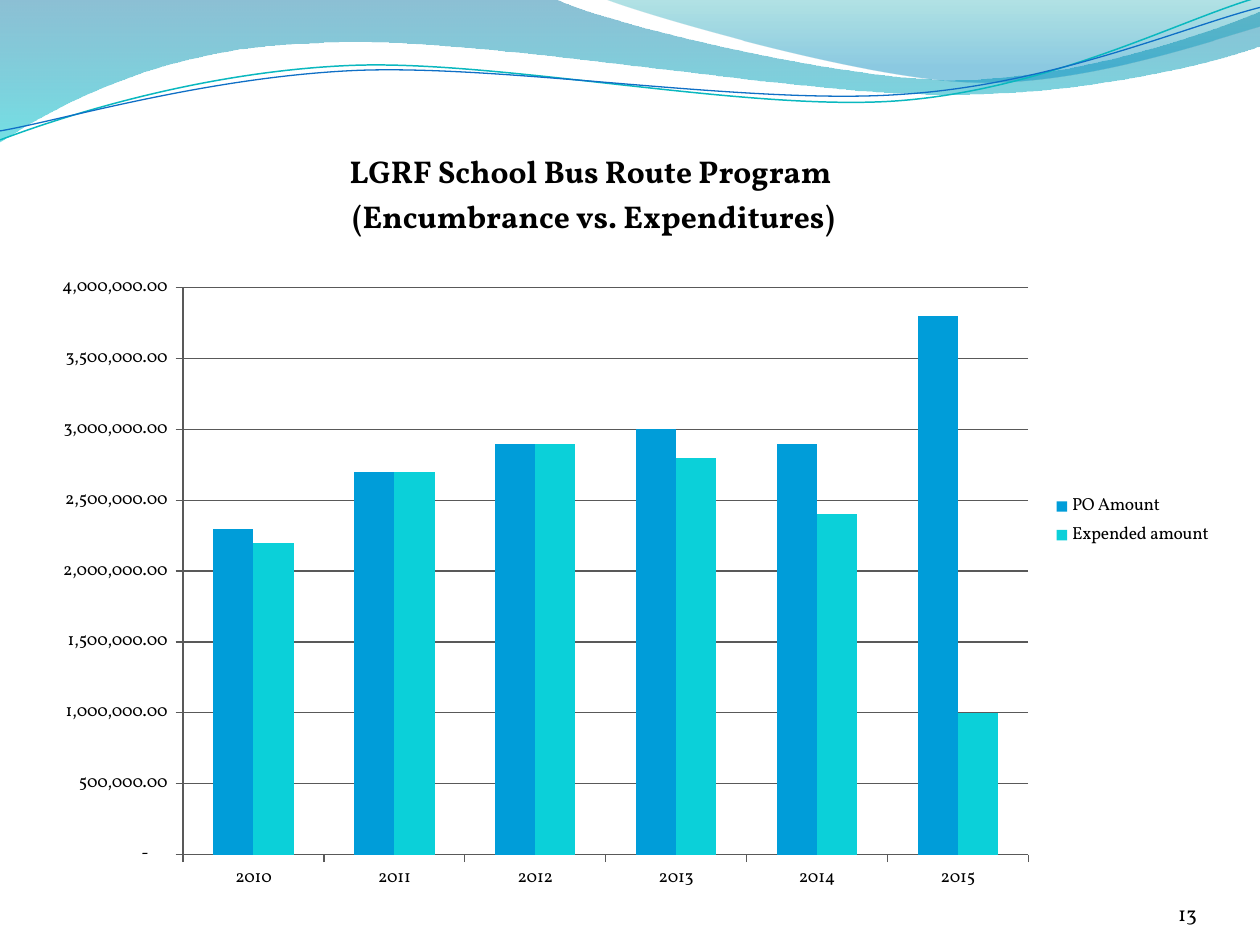
from math import cos, radians, sin

from lxml import etree
from pptx import Presentation
from pptx.chart.data import CategoryChartData
from pptx.dml.color import RGBColor
from pptx.enum.chart import XL_CHART_TYPE, XL_LEGEND_POSITION, XL_TICK_MARK
from pptx.enum.text import MSO_ANCHOR, PP_ALIGN
from pptx.oxml import parse_xml
from pptx.oxml.ns import nsdecls, qn
from pptx.util import Cm, Pt

COLUMNS = XL_CHART_TYPE.COLUMN_CLUSTERED
LEGEND_RIGHT = XL_LEGEND_POSITION.RIGHT
TICK_OUTSIDE = XL_TICK_MARK.OUTSIDE
BOTTOM = MSO_ANCHOR.BOTTOM
RIGHT = PP_ALIGN.RIGHT

FONT = "Vollkorn"
BLACK = "000000"
GRID = "595959"
TILT = -2.7
NUMBER_FORMAT = '_(* #,##0.00_);_(* \\(#,##0.00\\);_(* "-"??_);_(@_)'
TITLE = ["LGRF School Bus Route Program ", "(Encumbrance vs. Expenditures)"]
YEARS = ["2010", "2011", "2012", "2013", "2014", "2015"]
SERIES = [
    ("PO Amount", "009DD9", [2300000, 2700000, 2900000, 3000000, 2900000, 3800000]),
    ("Expended amount", "0BD0D9", [2200000, 2700000, 2900000, 2800000, 2400000, 1000000]),
]

WIDE_WAVE = [
    [(0, 0)],
    [(11.18, -0.03)],
    [(12.09, 0.43), (16.87, 1.6), (19.25, 1.6)],
    [(21.67, 1.6), (24.33, 0.66), (25.4, 0.23)],
    [(25.43, 0.91)],
    [(24.97, 1.12), (22.1, 1.93), (18.95, 1.9)],
    [(15.8, 1.9), (9.7, 0.71), (6.53, 0.86)],
    [(3.28, 0.91), (1.17, 2.11), (-0.03, 2.87)],
]
RIGHT_WAVE = [
    [(12.17, -0.03)],
    [(12.93, 0.28), (17.32, 1.57), (19.53, 1.65)],
    [(21.74, 1.75), (24.41, 0.81), (25.4, 0.53)],
    [(25.4, 0)],
]
TEAL_STRAND = [
    [(0, 2.82)],
    [(1.22, 2.36), (4.01, 1.45), (7.04, 1.32)],
    [(10.03, 1.19), (15.06, 2.26), (18.11, 2.03)],
    [(21.16, 1.8), (23.83, 0.38), (25.35, -0.05)],
]
BLUE_STRAND = [
    [(0, 2.64)],
    [(1.19, 2.44), (4.17, 1.55), (7.19, 1.42)],
    [(10.24, 1.3), (15.16, 2.13), (18.21, 1.9)],
    [(21.23, 1.7), (23.9, 0.53), (25.4, 0.15)],
]


def rgb(value):
    """Turn a hex string into a colour."""
    return RGBColor.from_string(value)


def style_font(font, size, bold=False):
    """Apply the slide's typeface in black."""
    font.name, font.size, font.bold = FONT, Pt(size), bold
    font.color.rgb = rgb(BLACK)


def turn(segments, center, degrees):
    """Rotate segments clockwise about a center."""
    cx, cy = center
    c, s = cos(radians(degrees)), sin(radians(degrees))
    return [[(cx + (x - cx) * c - (y - cy) * s, cy + (x - cx) * s + (y - cy) * c)
             for x, y in segment] for segment in segments]


def add_outline(slide, left, top, segments, close):
    """Draw straight and cubic segments from the box corner."""
    placed = [[(Cm(left + x), Cm(top + y)) for x, y in segment] for segment in segments]
    anchors = [segment[-1] for segment in placed]
    builder = slide.shapes.build_freeform(*anchors[0], scale=1.0)
    builder.add_line_segments(anchors[1:], close=close)
    outline = builder.convert_to_shape()
    outline.shadow.inherit = False
    sides = list(outline._element.spPr.iter(qn("a:lnTo")))
    for side, segment in zip(sides, placed[1:]):
        if len(segment) == 3:
            curve = etree.Element(qn("a:cubicBezTo"))
            for x, y in segment:
                etree.SubElement(curve, qn("a:pt"), x=str(x - outline.left),
                                 y=str(y - outline.top))
            side.getparent().replace(side, curve)
    return outline


def add_wave(slide, left, top, segments, stops):
    """Draw a closed wave with a translucent vertical gradient."""
    wave = add_outline(slide, left, top, segments, True)
    wave.line.fill.background()
    wave.fill.gradient()
    wave.fill.gradient_angle = 270
    for stop, (position, color, _) in zip(wave.fill.gradient_stops, stops):
        stop.position = position
        stop.color.rgb = rgb(color)
    for tint, (_, _, opacity) in zip(wave._element.spPr.iter(qn("a:srgbClr")), stops):
        etree.SubElement(tint, qn("a:alpha"), val=str(opacity * 1000))


def add_strand(slide, left, top, segments, center, color, width):
    """Draw an open curve, levelled and then tilted about its center."""
    strand = add_outline(slide, left, top, turn(segments, center, -TILT), False)
    strand.rotation = TILT
    strand.fill.background()
    strand.line.color.rgb = rgb(color)
    strand.line.width = Pt(width)


def add_banner(slide, left, top):
    """Place the waves and strands along the top edge."""
    add_wave(slide, left, top, WIDE_WAVE, [(0, "0074A1", 45), (1, "00C6CF", 55)])
    add_wave(slide, left, top, RIGHT_WAVE, [(0, "00A1A9", 30), (0.8, "008BBF", 45)])
    add_strand(slide, left, top, TEAL_STRAND, (12.67, 1.46), "0AB8BF", 0.85)
    add_strand(slide, left, top, BLUE_STRAND, (12.69, 1.5), "0F6FC6", 0.75)


def set_layout(parent, successor, **settings):
    """Give a chart part a fixed place, as fractions of the chart."""
    for former in parent.findall(qn("c:layout")):
        parent.remove(former)
    items = "".join(f'<c:{key} val="{value}"/>' for key, value in settings.items())
    layout = parse_xml(f'<c:layout {nsdecls("c")}><c:manualLayout>{items}'
                       '</c:manualLayout></c:layout>')
    parent.find(qn(successor)).addprevious(layout)


def style_axis(axis):
    """Set the axis line, ticks and labels."""
    axis.major_tick_mark = TICK_OUTSIDE
    axis.format.line.color.rgb = rgb(GRID)
    axis.format.line.width = Pt(0.75)
    style_font(axis.tick_labels.font, 10)


def add_program_chart(slide, left, top, width, height):
    """Place the chart of encumbrance and expenditure by year."""
    data = CategoryChartData(number_format=NUMBER_FORMAT)
    data.categories = YEARS
    for name, _, amounts in SERIES:
        data.add_series(name, amounts)
    chart = slide.shapes.add_chart(COLUMNS, Cm(left), Cm(top), Cm(width), Cm(height), data).chart
    style_font(chart.font, 10)

    heading = chart.chart_title.text_frame
    for index, words in enumerate(TITLE):
        paragraph = heading.add_paragraph() if index else heading.paragraphs[0]
        run = paragraph.add_run()
        run.text = words
        style_font(run.font, 18, True)
    set_layout(chart.chart_title._element, "c:overlay",
               xMode="edge", yMode="edge", x=6.28 / width, y=0.23 / height)

    plot = chart.plots[0]
    plot.gap_width, plot.overlap, plot.vary_by_categories = 150, 0, False
    for series, (_, color, _) in zip(plot.series, SERIES):
        series.format.fill.solid()
        series.format.fill.fore_color.rgb = rgb(color)
    set_layout(chart._chartSpace.chart.plotArea, "c:barChart", layoutTarget="inner",
               xMode="edge", yMode="edge", x=3 / width, y=3.06 / height,
               w=17.04 / width, h=11.43 / height)

    amounts = chart.value_axis
    style_axis(chart.category_axis)
    style_axis(amounts)
    amounts.minimum_scale, amounts.maximum_scale, amounts.major_unit = 0, 4000000, 500000
    amounts.tick_labels.number_format = NUMBER_FORMAT
    amounts.tick_labels.number_format_is_linked = False
    amounts.major_gridlines.format.line.color.rgb = rgb(GRID)
    amounts.major_gridlines.format.line.width = Pt(0.75)

    chart.has_legend = True
    chart.legend.position = LEGEND_RIGHT
    chart.legend.include_in_layout = False
    style_font(chart.legend.font, 10)


def add_page_number(slide, left, top, width, height):
    """Place the page number at the lower right."""
    frame = slide.shapes.add_textbox(Cm(left), Cm(top), Cm(width), Cm(height)).text_frame
    frame.word_wrap = True
    frame.vertical_anchor = BOTTOM
    frame.margin_left = frame.margin_right = frame.margin_top = frame.margin_bottom = 0
    frame.paragraphs[0].alignment = RIGHT
    number = frame.paragraphs[0].add_run()
    number.text = "13"
    style_font(number.font, 12)


def main():
    """Build the slide and save it."""
    deck = Presentation()
    deck.slide_width, deck.slide_height = Cm(25.4), Cm(19.05)
    slide = deck.slides.add_slide(deck.slide_layouts[6])
    add_banner(slide, 0, 0)
    add_page_number(slide, 22.02, 17.65, 2.11, 1.02)
    add_program_chart(slide, 0.69, 2.74, 24, 15.52)
    deck.save("out.pptx")


if __name__ == "__main__":
    main()
